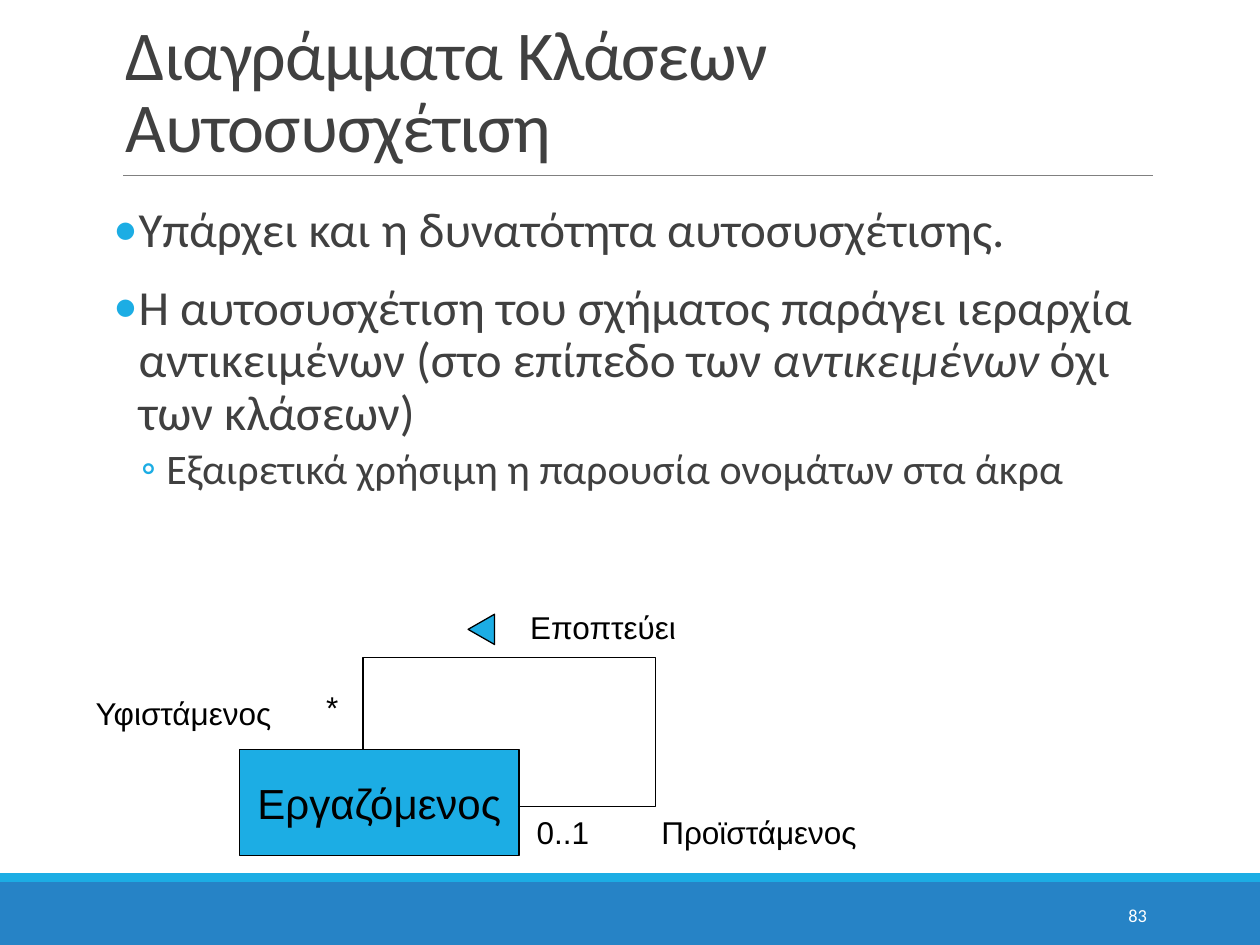
from pptx import Presentation
from pptx.dml.color import RGBColor
from pptx.enum.shapes import MSO_CONNECTOR, MSO_SHAPE
from pptx.enum.text import MSO_ANCHOR as ANCHOR, MSO_AUTO_SIZE as AUTO, PP_ALIGN as ALIGN
from pptx.oxml.ns import qn
from pptx.util import Inches, Pt
from lxml import etree

BLUE = RGBColor(0x26, 0x83, 0xC6)
CYAN = RGBColor(0x1C, 0xAD, 0xE4)
GRAY = RGBColor(0x80, 0x80, 0x80)
DARK = RGBColor(0x40, 0x40, 0x40)
BLACK = RGBColor(0, 0, 0)
WHITE = RGBColor(0xFF, 0xFF, 0xFF)


def apply(obj, **values):
    """Set each given attribute on an object."""
    for name, value in values.items():
        setattr(obj, name, value)


def style_run(r, size, color, font="Calibri", **extra):
    """Give a run its font, size and colour."""
    apply(r.font, name=font, size=Pt(size), **extra)
    r.font.color.rgb = color


def paint(sp, fill=None, line=None):
    """Set the fill and outline of a shape and drop its shadow."""
    sp.shadow.inherit = False
    if fill is None:
        sp.fill.background()
    else:
        sp.fill.solid()
        sp.fill.fore_color.rgb = fill
    if line is None:
        sp.line.fill.background()
    else:
        sp.line.color.rgb = line
        sp.line.width = Pt(0.75)


def add_shape(s, kind, x, y, w, h, fill, line=None):
    """Add a painted preset shape."""
    sp = s.shapes.add_shape(kind, Inches(x), Inches(y), Inches(w), Inches(h))
    paint(sp, fill, line)
    return sp


def add_text(s, x, y, w, h, **values):
    """Add a text box and return its frame."""
    tf = s.shapes.add_textbox(Inches(x), Inches(y), Inches(w), Inches(h)).text_frame
    apply(tf, **{"word_wrap": True, **values})
    return tf


def add_bullet(p, char, left):
    """Give a paragraph a coloured hanging bullet."""
    pPr = p._p.get_or_add_pPr()
    pPr.set("marL", str(Inches(left)))
    pPr.set("indent", str(Inches(-0.2)))
    color = etree.SubElement(pPr, qn("a:buClr"))
    etree.SubElement(color, qn("a:srgbClr"), val=str(CYAN))
    etree.SubElement(pPr, qn("a:buFont"), typeface="Calibri")
    etree.SubElement(pPr, qn("a:buChar"), char=char)


def add_title(s, x, y, w, h):
    """Place the two-line title and the rule below it."""
    p = add_text(s, x, y, w, h, vertical_anchor=ANCHOR.BOTTOM).paragraphs[0]
    p.text = "Διαγράμματα Κλάσεων\vΑυτοσυσχέτιση"
    p.line_spacing = 0.85
    for r in p.runs:
        style_run(r, 40, DARK)
        r._r.get_or_add_rPr().set("spc", "-50")
    rule_y = Inches(y + h + 0.02)
    rule = s.shapes.add_connector(MSO_CONNECTOR.STRAIGHT, Inches(x + 0.08), rule_y,
                                  Inches(x + w), rule_y)
    rule.line.color.rgb = GRAY
    rule.line.width = Pt(0.5)
    etree.SubElement(rule._element.spPr, qn("a:effectLst"))


def add_body(s, x, y, w, h):
    """Place the bulleted text."""
    tf = add_text(s, x, y, w, h, margin_left=0, margin_right=0)
    items = [
        (0, [("Υπάρχει και η δυνατότητα αυτοσυσχέτισης.", False)]),
        (0, [("Η αυτοσυσχέτιση του σχήματος παράγει ιεραρχία αντικειμένων "
              "(στο επίπεδο των ", False),
             ("αντικειμένων", True), (" όχι των κλάσεων)", False)]),
        (1, [("Εξαιρετικά χρήσιμη η παρουσία ονομάτων στα άκρα", False)]),
    ]
    levels = [("•", 0.2, 28, 12, 2), ("◦", 0.42, 24, 2, 4)]
    for i, (level, parts) in enumerate(items):
        char, left, size, before, after = levels[level]
        p = tf.add_paragraph() if i else tf.paragraphs[0]
        apply(p, level=level, line_spacing=0.9, space_before=Pt(before), space_after=Pt(after))
        add_bullet(p, char, left)
        for text, italic in parts:
            r = p.add_run()
            r.text = text
            style_run(r, size, DARK, italic=italic)


def add_diagram(s, x, y):
    """Draw the class with its association to itself, from the top left corner."""
    box = add_shape(s, MSO_SHAPE.RECTANGLE, x + 1.24, y + 1.17, 2.22, 0.84, CYAN, BLACK)
    tf = box.text_frame
    apply(tf, word_wrap=False, vertical_anchor=ANCHOR.MIDDLE)
    p = tf.paragraphs[0]
    p.alignment = ALIGN.CENTER
    r = p.add_run()
    r.text = "Εργαζόμενος"
    style_run(r, 24, BLACK, "Arial")

    loop = [(3.45, 1.62), (4.54, 1.62), (4.54, 0.44), (2.22, 0.44), (2.22, 1.17)]
    points = [(Inches(x + dx), Inches(y + dy)) for dx, dy in loop]
    builder = s.shapes.build_freeform(*points[0])
    builder.add_line_segments(points[1:], close=False)
    paint(builder.convert_to_shape(), line=BLACK)

    arrow = add_shape(s, MSO_SHAPE.ISOSCELES_TRIANGLE, x + 3.04, y + 0.11, 0.24, 0.21,
                      CYAN, BLACK)
    arrow.rotation = 270

    labels = [
        ("Εποπτεύει", 3.45, 0, 1.36, False),
        ("0..1", 3.5, 1.62, 0.62, False),
        ("Προϊστάμενος", 4.49, 1.62, 1.82, True),
        ("Υφιστάμενος", 0, 0.68, 1.82, True),
        ("*", 1.83, 0.63, 0.3, False),
    ]
    for text, dx, dy, w, wrap in labels:
        tf = add_text(s, x + dx, y + dy, w, 0.4, word_wrap=wrap,
                      auto_size=AUTO.SHAPE_TO_FIT_TEXT)
        r = tf.paragraphs[0].add_run()
        r.text = text
        style_run(r, 18, BLACK, "Arial")


def add_footer(s, x, y, w, h):
    """Draw the bottom bands and the slide number."""
    add_shape(s, MSO_SHAPE.RECTANGLE, x, y + 0.07, w, h - 0.07, BLUE)
    add_shape(s, MSO_SHAPE.RECTANGLE, x, y, w, 0.07, CYAN)
    tf = add_text(s, x + 8.12, y + 0.13, 1.08, 0.4, vertical_anchor=ANCHOR.MIDDLE)
    p = tf.paragraphs[0]
    p.alignment = ALIGN.RIGHT
    r = p.add_run()
    r.text = "83"
    style_run(r, 10.5, WHITE)


def main():
    """Build and save the slide."""
    prs = Presentation()
    apply(prs, slide_width=Inches(10), slide_height=Inches(7.5))
    s = prs.slides.add_slide(prs.slide_layouts[6])
    add_footer(s, 0, 6.93, 10, 0.57)
    add_title(s, 0.9, 0.11, 8.25, 1.26)
    add_body(s, 0.9, 1.58, 8.25, 5.27)
    add_diagram(s, 0.66, 4.78)
    prs.save("out.pptx")


if __name__ == "__main__":
    main()
